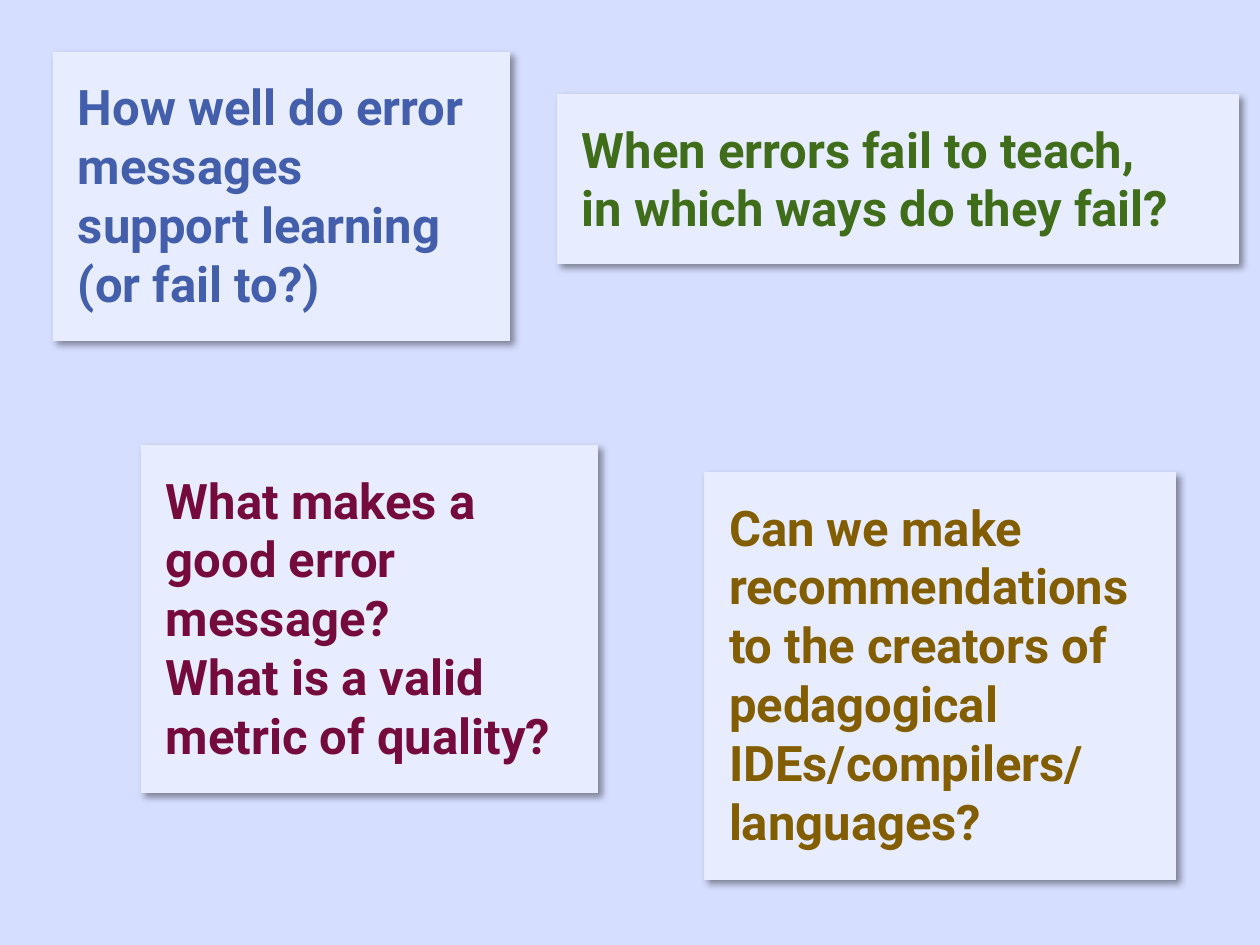
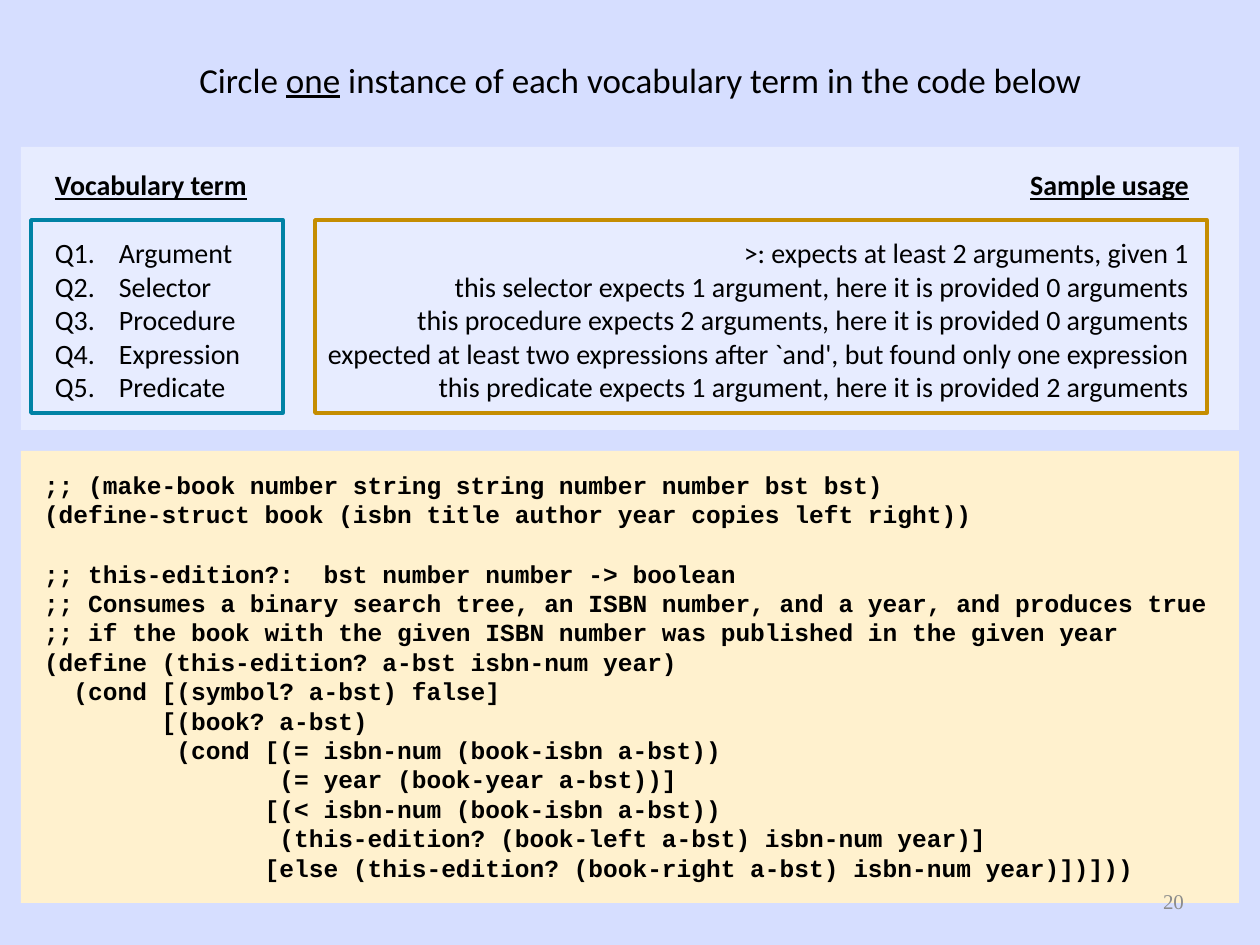
from lxml.etree import SubElement
from pptx import Presentation
from pptx.dml.color import RGBColor
from pptx.enum.shapes import MSO_SHAPE
from pptx.enum.text import MSO_ANCHOR, MSO_AUTO_SIZE, PP_ALIGN
from pptx.oxml.ns import qn
from pptx.util import Pt

SCALE = 914400 / 126
COLORS = {
    "back": "D6DEFF", "pale": "E7ECFF", "cream": "FFF1CE", "black": "000000",
    "blue": "435EAA", "green": "3F6D19", "wine": "750B3D", "brown": "835E01",
    "teal": "0082A5", "gold": "C58D01", "gray": "8C8C8C",
}
FONTS = {
    "card": {"name": "Roboto", "size": Pt(28), "bold": True},
    "title": {"name": "Calibri", "size": Pt(20), "bold": False},
    "head": {"name": "Calibri", "size": Pt(16), "bold": True, "underline": True},
    "term": {"name": "Calibri", "size": Pt(16), "bold": False},
    "code": {"name": "Courier New", "size": Pt(14), "bold": True},
    "page": {"name": "Times New Roman", "size": Pt(12)},
}
CARDS = [
    ((53, 52, 457, 289), "blue",
     "How well do error messages support learning\v(or fail to?)"),
    ((557, 94, 682, 170), "green",
     "When errors fail to teach,\vin which ways do they fail?"),
    ((141, 445, 457, 348), "wine",
     "What makes a good error message?\vWhat is a valid metric of quality?"),
    ((704, 472, 472, 408), "brown",
     "Can we make recommendations to the creators of pedagogical "
     "IDEs/compilers/ languages?"),
]
TITLE = ["Circle ", "one", " instance of each vocabulary term in the code below"]
TERMS = [
    ("Argument", ">: expects at least 2 arguments, given 1"),
    ("Selector", "this selector expects 1 argument, here it is provided 0 arguments"),
    ("Procedure", "this procedure expects 2 arguments, here it is provided 0 arguments"),
    ("Expression", "expected at least two expressions after `and', but found only one expression"),
    ("Predicate", "this predicate expects 1 argument, here it is provided 2 arguments"),
]
CODE = [
    """;; (make-book number string string number number bst bst)
(define-struct book (isbn title author year copies left right))""",
    """;; this-edition?:  bst number number -> boolean
;; Consumes a binary search tree, an ISBN number, and a year, and produces true
;; if the book with the given ISBN number was published in the given year
(define (this-edition? a-bst isbn-num year)
  (cond [(symbol? a-bst) false]
        [(book? a-bst)
         (cond [(= isbn-num (book-isbn a-bst))
                (= year (book-year a-bst))]
               [(< isbn-num (book-isbn a-bst))
                (this-edition? (book-left a-bst) isbn-num year)]
               [else (this-edition? (book-right a-bst) isbn-num year)])]))""",
]


def px(num):
    return round(num * SCALE)


def color(name):
    return RGBColor.from_string(COLORS[name])


def put(item, values):
    for name, value in values.items():
        setattr(item, name, value)


def ink(item, kind, tone="black"):
    put(item.font, FONTS[kind])
    item.font.color.rgb = color(tone)


def move(shape, box):
    put(shape, dict(zip(("left", "top", "width", "height"), map(px, box))))


def fit(shape, side=13, top=6, anchor=MSO_ANCHOR.TOP):
    frame = shape.text_frame
    put(frame, {
        "word_wrap": True, "auto_size": MSO_AUTO_SIZE.NONE,
        "vertical_anchor": anchor, "margin_left": px(side),
        "margin_right": px(side), "margin_top": px(top), "margin_bottom": px(top),
    })
    return frame


def panel(slide, box, fill=None, line=None):
    shape = slide.shapes.add_shape(MSO_SHAPE.RECTANGLE, *map(px, box))
    shape.shadow.inherit = False
    if fill:
        shape.fill.solid()
        shape.fill.fore_color.rgb = color(fill)
    else:
        shape.fill.background()
    if line:
        shape.line.color.rgb = color(line)
        shape.line.width = Pt(2)
    else:
        shape.line.fill.background()
    return shape


def shade(shape):
    effects = shape.element.spPr.find(qn("a:effectLst"))
    outer = SubElement(effects, qn("a:outerShdw"), blurRad=str(Pt(4)),
                       dist=str(Pt(3)), dir="2700000", algn="tl", rotWithShape="0")
    tone = SubElement(outer, qn("a:srgbClr"), val=COLORS["black"])
    SubElement(tone, qn("a:alpha"), val="40000")


def card(slide, box, tone, text):
    shape = panel(slide, box, "pale")
    shade(shape)
    para = fit(shape, 25, 25).paragraphs[0]
    para.text = text
    para.alignment = PP_ALIGN.LEFT
    for run in para.runs:
        ink(run, "card", tone)


def heading(slide, box):
    title = slide.shapes.title
    move(title, box)
    para = fit(title).paragraphs[0]
    para.alignment = PP_ALIGN.CENTER
    for text in TITLE:
        run = para.add_run()
        run.text = text
        ink(run, "title")
        run.font.underline = text == "one"


def label(slide, box, **layout):
    return fit(slide.shapes.add_textbox(*map(px, box)), **layout)


def row(para, text, kind, stops, gap=0):
    run = para.add_run()
    run.text = text
    ink(run, kind)
    para.space_before = Pt(gap)
    tabs = SubElement(para._p.get_or_add_pPr(), qn("a:tabLst"))
    for pos, side in stops:
        SubElement(tabs, qn("a:tab"), pos=str(px(pos)), algn=side)


def terms(slide, box):
    x, y, wide, high = box
    panel(slide, box, "pale")
    frame = label(slide, (x + 21, y + 15, wide - 21, high - 34))
    usage = (1134, "r")
    row(frame.paragraphs[0], "Vocabulary term\tSample usage", "head", [usage])
    for num, (term, sample) in enumerate(TERMS, 1):
        row(frame.add_paragraph(), f"Q{num}.\t{term}\t{sample}", "term",
            [(64, "l"), usage], 19.5 if num == 1 else 0)
    for left, size, tone in ((10, 252, "teal"), (294, 892, "gold")):
        panel(slide, (x + left, y + 73, size, 193), line=tone)


def code(slide, box):
    x, y, wide, high = box
    panel(slide, box, "cream")
    frame = label(slide, (x + 10, y + 13, wide, high - 23))
    frame.text = "\n".join(CODE)
    for para in frame.paragraphs:
        ink(para.runs[0], "code")
    start = len(CODE[0].splitlines())
    frame.paragraphs[start].space_before = Pt(17)


def page(slide, box, num):
    para = label(slide, box, anchor=MSO_ANCHOR.MIDDLE).paragraphs[0]
    para.alignment = PP_ALIGN.RIGHT
    run = para.add_run()
    run.text = str(num)
    ink(run, "page", "gray")


def start(deck, layout):
    slide = deck.slides.add_slide(deck.slide_layouts[layout])
    fill = slide.background.fill
    fill.solid()
    fill.fore_color.rgb = color("back")
    return slide


def asks(deck):
    slide = start(deck, 6)
    for box, tone, text in CARDS:
        card(slide, box, tone, text)


def quiz(deck):
    slide = start(deck, 5)
    heading(slide, (42, 52, 1197, 58))
    code(slide, (21, 451, 1218, 452))
    terms(slide, (21, 147, 1218, 283))
    page(slide, (903, 876, 294, 50), 20)


def main():
    deck = Presentation()
    put(deck, {"slide_width": px(1260), "slide_height": px(945)})
    asks(deck)
    quiz(deck)
    deck.save("out.pptx")


if __name__ == "__main__":
    main()
